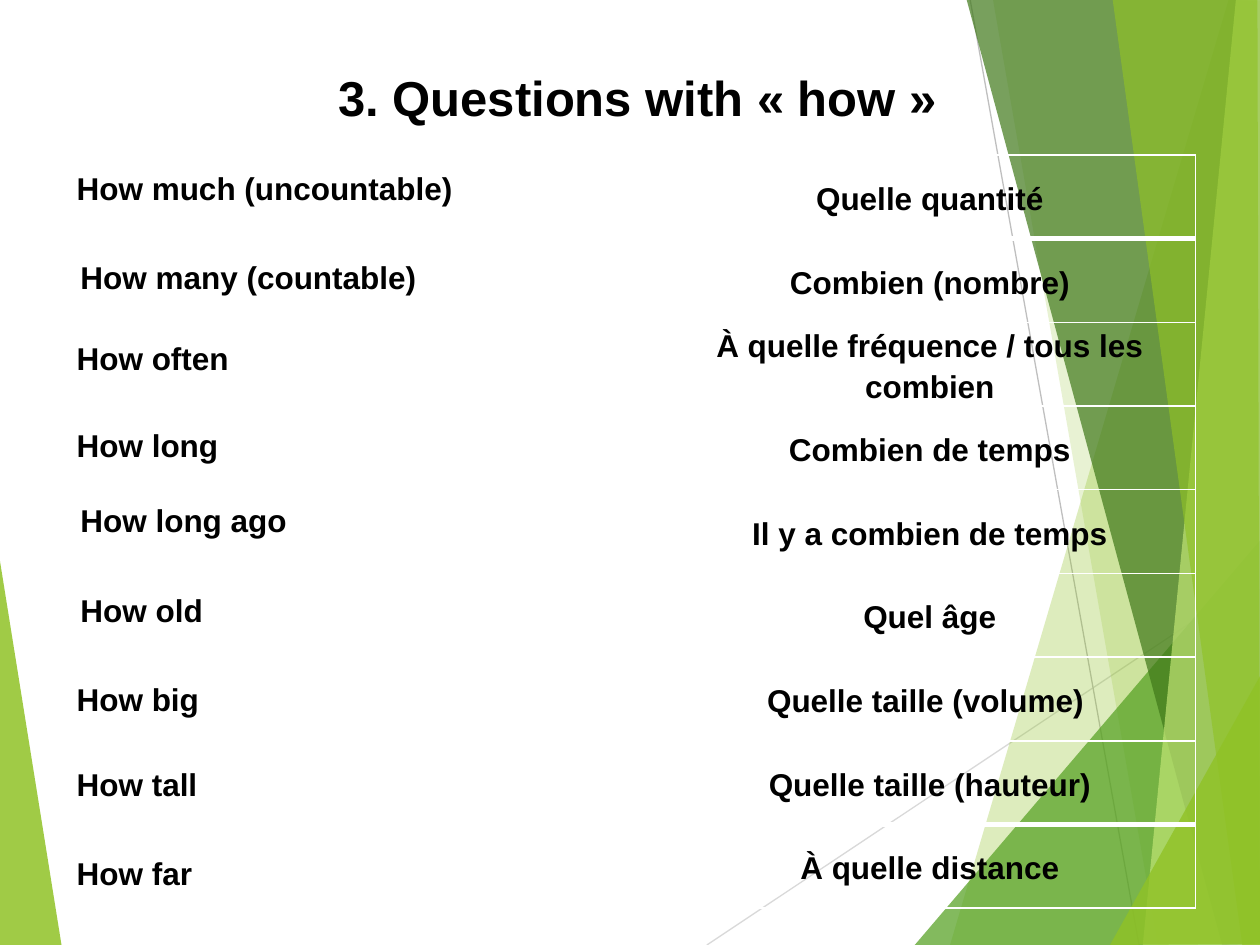
from lxml.etree import SubElement
from pptx import Presentation
from pptx.dml.color import RGBColor
from pptx.enum.shapes import MSO_CONNECTOR
from pptx.enum.text import MSO_ANCHOR, MSO_AUTO_SIZE, PP_ALIGN
from pptx.oxml.ns import qn
from pptx.util import Inches, Pt

STRAIGHT = MSO_CONNECTOR.STRAIGHT
MIDDLE = MSO_ANCHOR.MIDDLE
GROW = MSO_AUTO_SIZE.SHAPE_TO_FIT_TEXT
LEFT, CENTER = PP_ALIGN.LEFT, PP_ALIGN.CENTER

BLACK = RGBColor(0x00, 0x00, 0x00)
WHITE = RGBColor(0xFF, 0xFF, 0xFF)
LIME = RGBColor(0x90, 0xC2, 0x26)
PALE_LIME = RGBColor(0xC0, 0xE4, 0x74)
GREEN = RGBColor(0x54, 0xA0, 0x21)
DARK_GREEN = RGBColor(0x3F, 0x78, 0x19)
LIGHT_GRAY = RGBColor(0xD9, 0xD9, 0xD9)
GRAY = RGBColor(0xBF, 0xBF, 0xBF)

LEFT_FACET = ([(-0.01, 4.39), (0.49, 7.51), (-0.01, 7.5)], LIME, 85)
RAYS = [((5.61, 7.5), (10.01, 4.57), LIGHT_GRAY), ((7.7, 0), (9.04, 7.5), GRAY)]
RIGHT_FACETS = [
    ([(9.75, 0), (7.54, 7.5), (10.02, 7.51), (10.01, 0.01)], LIME, 30),
    ([(7.88, -0.01), (9.19, 7.5), (10.01, 7.5), (10.01, -0.01)], LIME, 20),
    ([(7.26, 7.5), (10, 4.29), (10.01, 7.5)], GREEN, 72),
    ([(7.67, -0.01), (9.7, 7.5), (10.01, 7.49), (10.01, -0.01)], DARK_GREEN, 70),
    ([(9.81, -0.01), (9.07, 7.5), (10.01, 7.5), (10, -0.01)], PALE_LIME, 70),
    ([(8.83, -0.01), (9.86, 7.5), (10, 7.5), (9.98, -0.01)], LIME, 65),
    ([(8.81, 7.5), (10.01, 5.35), (10.01, 7.49)], LIME, 80),
]
QUESTIONS = [
    ("How much (uncountable)", 0.51, 1.29, "Quelle quantité"),
    ("How many (countable)", 0.54, 2, "Combien (nombre)"),
    ("How often", 0.51, 2.64, "À quelle fréquence / tous les combien"),
    ("How long", 0.51, 3.33, "Combien de temps"),
    ("How long ago", 0.54, 3.93, "Il y a combien de temps"),
    ("How old", 0.54, 4.64, "Quel âge"),
    ("How big", 0.51, 5.35, "Quelle taille (volume) "),
    ("How tall", 0.51, 6.02, "Quelle taille (hauteur)"),
    ("How far", 0.51, 6.73, "À quelle distance"),
]


def write_text(frame, text, size=18, align=LEFT, indent=0, spacing=None, before=None):
    paragraph = frame.paragraphs[0]
    paragraph.alignment = align
    paragraph.line_spacing = spacing
    if before:
        paragraph.space_before = Pt(before)
    if indent:
        properties = paragraph._p.get_or_add_pPr()
        properties.set("marL", str(Inches(indent)))
        properties.set("indent", "0")
    run = paragraph.add_run()
    run.text = text
    run.font.name = "Arial"
    run.font.size = Pt(size)
    run.font.bold = True
    run.font.color.rgb = BLACK


class SlideBuilder:
    """Holds the slide and the shared style of its elements."""

    def __init__(self, slide, line_width=0.75, border_color=WHITE):
        self.slide = slide
        self.line_width = line_width
        self.border_color = border_color

    def facet(self, points, color, opacity):
        corners = [(Inches(x), Inches(y)) for x, y in points]
        builder = self.slide.shapes.build_freeform(*corners[0])
        builder.add_line_segments(corners[1:], close=True)
        shape = builder.convert_to_shape()
        shape.shadow.inherit = False
        shape.line.fill.background()
        shape.fill.solid()
        shape.fill.fore_color.rgb = color
        color_element = shape._element.spPr.find(qn("a:solidFill"))[0]
        SubElement(color_element, qn("a:alpha"), val=str(opacity * 1000))

    def ray(self, start, end, color):
        ends = [Inches(value) for value in (*start, *end)]
        connector = self.slide.shapes.add_connector(STRAIGHT, *ends)
        connector.line.color.rgb = color
        connector.line.width = Pt(self.line_width)
        SubElement(connector._element.spPr, qn("a:effectLst"))

    def text_box(self, text, left, top, width, height, **text_format):
        box = self.slide.shapes.add_textbox(
            Inches(left), Inches(top), Inches(width), Inches(height))
        box.text_frame.word_wrap = True
        box.text_frame.auto_size = GROW
        write_text(box.text_frame, text, **text_format)

    def cell_borders(self, cell, top, bottom):
        properties = cell._tc.get_or_add_tcPr()
        widths = {"a:lnL": 1, "a:lnR": 1, "a:lnT": top, "a:lnB": bottom}
        for position, (tag, width) in enumerate(widths.items()):
            line = SubElement(properties, qn(tag), w=str(Pt(width)))
            fill = SubElement(line, qn("a:solidFill"))
            SubElement(fill, qn("a:srgbClr"), val=str(self.border_color))
            properties.insert(position, line)

    def answer_table(self, answers, left, top, column_widths, height):
        count = len(answers)
        frame = self.slide.shapes.add_table(
            count, len(column_widths), Inches(left), Inches(top),
            Inches(sum(column_widths)), Inches(height))
        table = frame.table
        table.first_row = False
        table.horz_banding = False
        for column, width in zip(table.columns, column_widths):
            column.width = Inches(width)
        for index, answer in enumerate(answers):
            table.rows[index].height = Inches(height / count)
            for cell in table.rows[index].cells:
                cell.fill.background()
                self.cell_borders(
                    cell,
                    top=3 if index in (1, count - 1) else 1,
                    bottom=3 if index in (0, count - 2) else 1)
            cell = table.cell(index, 1)
            cell.vertical_anchor = MIDDLE
            cell.margin_left = cell.margin_right = 0
            cell.margin_top = cell.margin_bottom = 0
            write_text(cell.text_frame, answer, align=CENTER, indent=0.05, spacing=1.15)


def main():
    presentation = Presentation()
    presentation.slide_width = Inches(10)
    presentation.slide_height = Inches(7.5)
    slide = presentation.slides.add_slide(presentation.slide_layouts[6])
    slide.background.fill.solid()
    slide.background.fill.fore_color.rgb = WHITE
    builder = SlideBuilder(slide)
    builder.facet(*LEFT_FACET)
    for ray in RAYS:
        builder.ray(*ray)
    for facet in RIGHT_FACETS:
        builder.facet(*facet)
    answers = [answer for *_, answer in QUESTIONS]
    builder.answer_table(answers, 0.51, 1.23, (4.71, 4.27), 5.98)
    builder.text_box("3. Questions with «\u00a0how\u00a0»".replace("\u00a0", " "),
                     0.28, 0.42, 7.95, 0.6, size=28, align=CENTER,
                     indent=1.61, spacing=1.15, before=16.7)
    for question, left, top, _ in QUESTIONS:
        builder.text_box(question, left, top, 4.49, 0.4)
    presentation.save("out.pptx")


if __name__ == "__main__":
    main()
